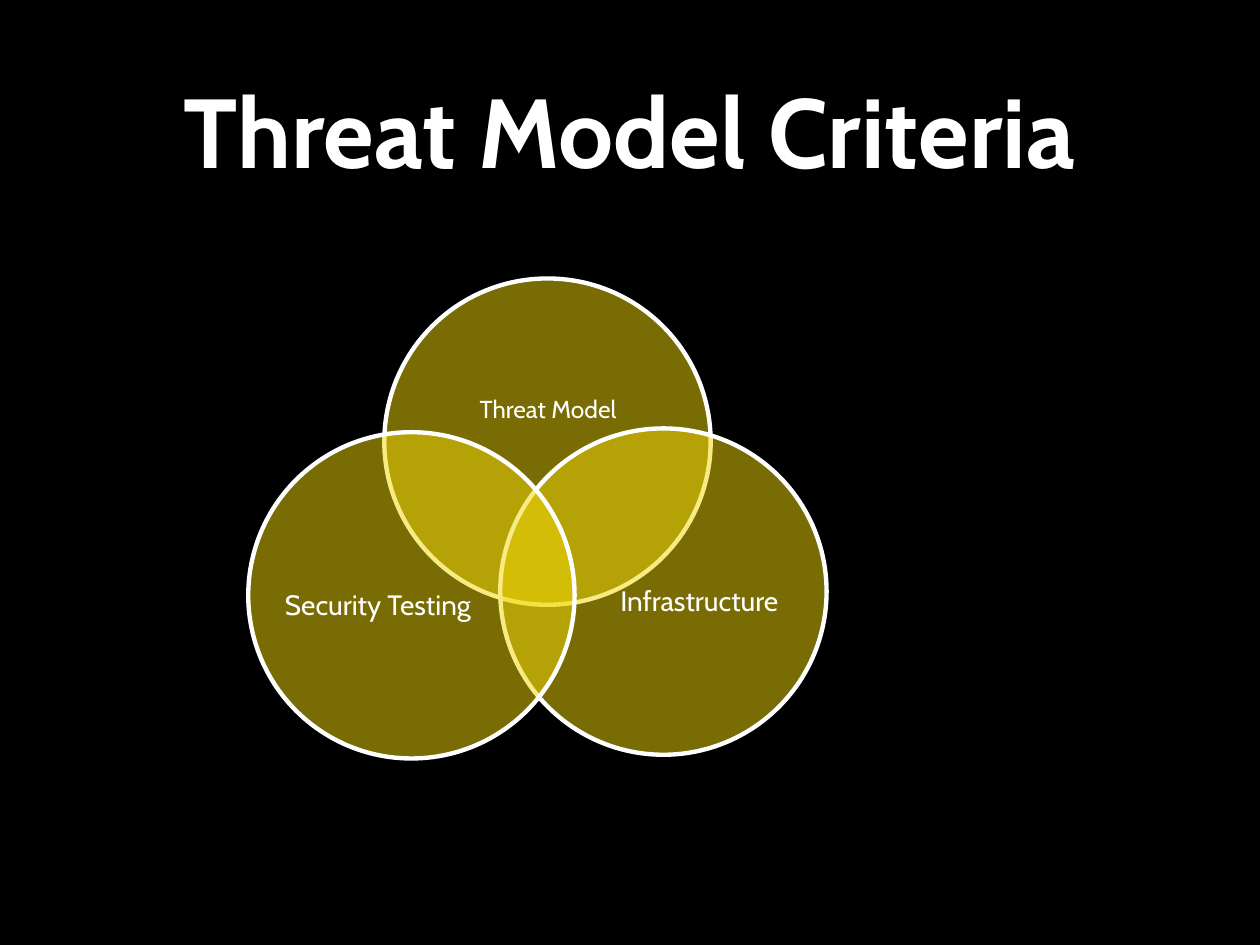
import pptx
import pptx.dml.color
import pptx.enum.shapes
import pptx.enum.text
import pptx.oxml
import pptx.oxml.ns
import pptx.util
from pptx.util import Inches

BLACK = pptx.dml.color.RGBColor(0x00, 0x00, 0x00)
WHITE = pptx.dml.color.RGBColor(0xFF, 0xFF, 0xFF)
YELLOW = pptx.dml.color.RGBColor(0xF2, 0xD9, 0x08)
FONT = "Cabin"
DIAMETER = 2.59

# circle (left, top), label, label box (left, top, width, height), label size
CRITERIA = [
    ((3.05, 2.21), "Threat Model", (3.4, 2.67, 1.9, 1.17), 14),
    ((3.97, 3.4), "Infrastructure", (4.77, 4.07, 1.56, 1.43), 16),
    ((1.97, 3.43), "Security Testing", (2.22, 4.1, 1.56, 1.43), 16),
]


def add_text(slide, text, box, *, size, bold=False, inset=0, line_spacing=1.0):
    """Add white text centred both ways in its box."""
    frame = slide.shapes.add_textbox(*map(Inches, box)).text_frame
    frame.word_wrap = True
    frame.vertical_anchor = pptx.enum.text.MSO_ANCHOR.MIDDLE
    frame.margin_left = frame.margin_right = Inches(inset)
    frame.margin_top = frame.margin_bottom = Inches(inset / 2)
    paragraph = frame.paragraphs[0]
    paragraph.alignment = pptx.enum.text.PP_ALIGN.CENTER
    paragraph.line_spacing = line_spacing
    run = paragraph.add_run()
    run.text = text
    run.font.name = FONT
    run.font.size = pptx.util.Pt(size)
    run.font.bold = bold
    run.font.color.rgb = WHITE


def set_opacity(shape, percent):
    color = shape.fill._xPr.find(".//" + pptx.oxml.ns.qn("a:srgbClr"))
    alpha = pptx.oxml.parse_xml(
        f'<a:alpha {pptx.oxml.ns.nsdecls("a")} val="{percent * 1000}"/>'
    )
    color.append(alpha)


def add_venn_circle(slide, left, top):
    circle = slide.shapes.add_shape(
        pptx.enum.shapes.MSO_SHAPE.OVAL,
        Inches(left), Inches(top), Inches(DIAMETER), Inches(DIAMETER),
    )
    circle.shadow.inherit = False
    circle.fill.solid()
    circle.fill.fore_color.rgb = YELLOW
    set_opacity(circle, 50)
    circle.line.color.rgb = WHITE
    circle.line.width = pptx.util.Pt(2.5)


def main():
    presentation = pptx.Presentation()
    presentation.slide_width = Inches(10)
    presentation.slide_height = Inches(7.5)
    slide = presentation.slides.add_slide(presentation.slide_layouts[6])
    slide.background.fill.solid()
    slide.background.fill.fore_color.rgb = BLACK

    add_text(slide, "Threat Model Criteria", (0.85, 0.12, 8.29, 1.81),
             size=56, bold=True, inset=0.1)
    for corner, label, label_box, label_size in CRITERIA:
        add_venn_circle(slide, *corner)
        add_text(slide, label, label_box, size=label_size, line_spacing=0.9)

    presentation.save("out.pptx")


if __name__ == "__main__":
    main()
